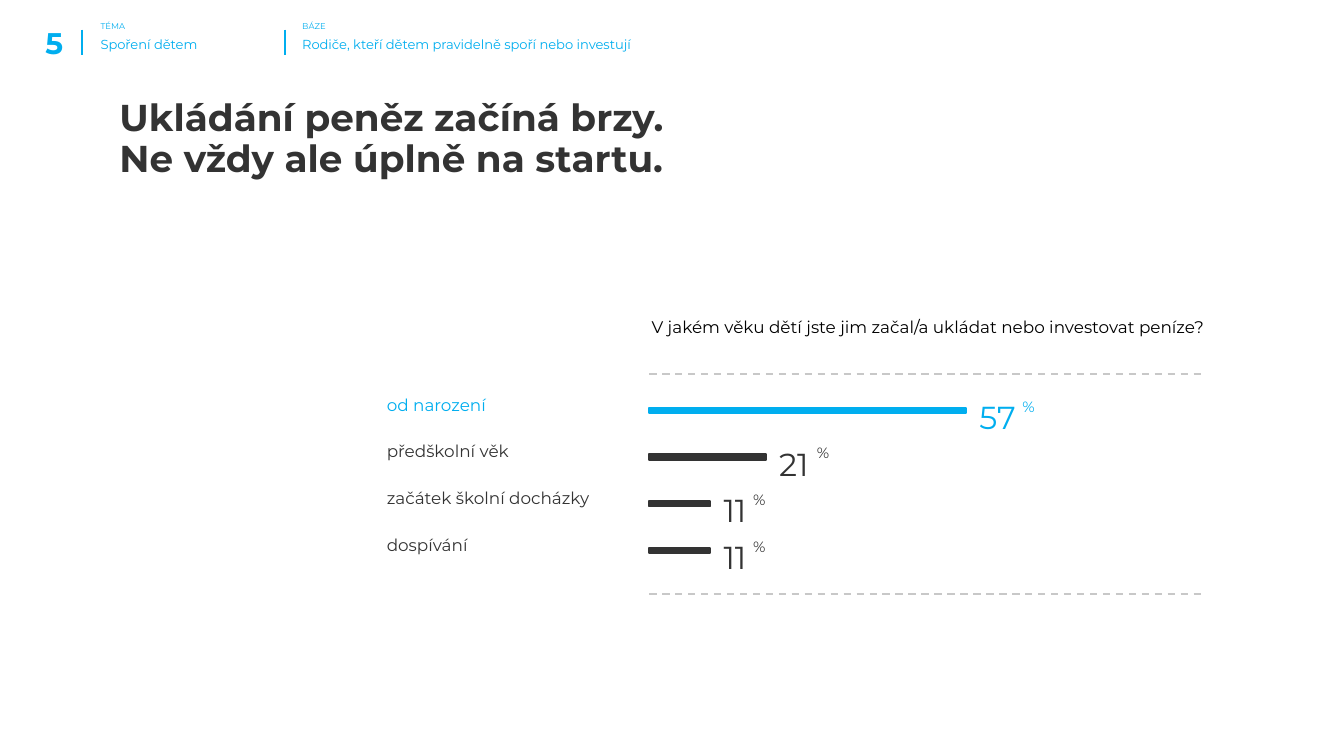
from collections import namedtuple

from lxml.etree import SubElement
from pptx import Presentation
from pptx.dml.color import RGBColor
from pptx.enum.dml import MSO_LINE_DASH_STYLE as Dash
from pptx.enum.shapes import MSO_CONNECTOR as Connector, MSO_SHAPE as Shape
from pptx.enum.text import MSO_ANCHOR as Anchor, PP_ALIGN as Align
from pptx.oxml.ns import qn
from pptx.util import Inches, Pt

COLUMNS, ROWS = 100, 56.25
CELL = Inches(0.1)
FONT = "Montserrat"
BLUE, DARK, BLACK, GREY = "00AEEF", "333333", "000000", "C8C8C8"

Box = namedtuple("Box", "left top width height")
Answer = namedtuple("Answer", "label percent label_width value_width sign_offset color")

ANSWERS = [
    Answer("od narození", 57, 11.7, 6.6, 3.2, BLUE),
    Answer("předškolní věk", 21, 13.7, 6.2, 2.8, DARK),
    Answer("začátek školní docházky", 11, 20, 5.6, 2.2, DARK),
    Answer("dospívání", 11, 10.3, 5.6, 2.2, DARK),
]


def cells(*counts):
    """Turn counts of grid cells into slide lengths."""
    return [round(count * CELL) for count in counts]


def rgb(color):
    """Turn a hex string into a colour."""
    return RGBColor.from_string(color)


def set_values(target, values):
    """Set each named attribute of the target."""
    for name, value in values.items():
        setattr(target, name, value)


def add_text(slide, box, text, size, color, bold=False, frame_format=None, paragraph_format=None):
    """Add a one-paragraph text box."""
    frame = slide.shapes.add_textbox(*cells(*box)).text_frame
    margins = {f"margin_{side}": CELL for side in ("left", "top", "right", "bottom")}
    set_values(frame, {"word_wrap": True, **margins, **(frame_format or {})})
    paragraph = frame.paragraphs[0]
    paragraph.text = text
    set_values(paragraph, paragraph_format or {})
    for run in paragraph.runs:
        set_values(run.font, {"name": FONT, "size": Pt(size), "bold": bold})
        run.font.color.rgb = rgb(color)


def add_line(slide, start, end, color, width, dash=None):
    """Add a straight line without a shadow."""
    line = slide.shapes.add_connector(Connector.STRAIGHT, *cells(*start, *end))
    line.line.color.rgb = rgb(color)
    set_values(line.line, {"width": Pt(width), "dash_style": dash})
    SubElement(line._element.spPr, qn("a:effectLst"))


def add_bar(slide, box, color):
    """Add a filled bar with an outline of the same colour."""
    bar = slide.shapes.add_shape(Shape.RECTANGLE, *cells(*box))
    bar.shadow.inherit = False
    bar.fill.solid()
    bar.fill.fore_color.rgb = rgb(color)
    bar.line.color.rgb = rgb(color)
    bar.line.width = Pt(1)


def add_header(slide, box, number, entries):
    """Place the page number and the captioned entries, each after a rule."""
    add_text(slide, Box(box.left, box.top, 4.7, 4.5), number, 16, BLUE, True,
             {"vertical_anchor": Anchor.BOTTOM, "margin_right": 0, "margin_bottom": 0},
             {"alignment": Align.RIGHT})
    for caption, text, rule, offset, width in entries:
        x, left = box.left + rule, box.left + offset
        add_line(slide, (x, box.top + 2.2), (x, box.top + 4.1), BLUE, 0.75)
        add_text(slide, Box(left, box.top + 1.2, 6.3, 4.2), caption, 4.5, BLUE)
        add_text(slide, Box(left, box.top + 2.1, width, 2.9), text, 7, BLUE)


def add_title(slide, box, lines):
    """Place the headline."""
    add_text(slide, box, "\v".join(lines), 20, DARK, True, None, {"line_spacing": 0.9})


def add_answer(slide, box, answer, axis, scale):
    """Place one row: label, bar, value and percent sign."""
    color, end = answer.color, axis + scale * answer.percent / 100
    add_text(slide, Box(box.left, box.top, answer.label_width, 3.3), answer.label, 9, color)
    add_bar(slide, Box(axis, box.top + 1.75, end - axis, 0.4), color)
    add_text(slide, Box(end, box.top, answer.value_width, 3.8), str(answer.percent), 17, color)
    add_text(slide, Box(end + answer.sign_offset, box.top + 0.3, 4.6, 2.9), "%", 8, color)


def add_answers(slide, box, question, answers):
    """Place the question and its answer rows between two dashed rules."""
    axis, right, pitch = box.left + 20.5, box.left + box.width, 3.48
    first_rule, last_rule = box.top + 5, box.top + box.height
    add_text(slide, Box(axis - 0.8, box.top, 46.9, 3.5), question, 9, BLACK)
    for y in (first_rule, last_rule):
        add_line(slide, (axis, y), (right, y), GREY, 1, Dash.DASH)
    for index, answer in enumerate(answers):
        row = Box(box.left, first_rule + 0.78 + index * pitch, box.width, pitch)
        add_answer(slide, row, answer, axis, right - axis)


def main():
    """Build and save the slide."""
    presentation = Presentation()
    width, height = cells(COLUMNS, ROWS)
    set_values(presentation, {"slide_width": width, "slide_height": height})
    slide = presentation.slides.add_slide(presentation.slide_layouts[6])
    add_header(slide, Box(0, 0, COLUMNS, 5), "5", [
        ("TÉMA", "Spoření dětem", 6.1, 6.5, 12.3),
        ("BÁZE", "Rodiče, kteří dětem pravidelně spoří nebo investují", 21.2, 21.5, 43.5),
    ])
    add_title(slide, Box(7.9, 6.4, 65.8, 12.8),
              ["Ukládání peněz začíná brzy.", "Ne vždy ale úplně na startu."])
    add_answers(slide, Box(27.8, 22.8, 61.9, 21.4),
                "V jakém věku dětí jste jim začal/a ukládat nebo investovat peníze?", ANSWERS)
    presentation.save("out.pptx")


if __name__ == "__main__":
    main()
